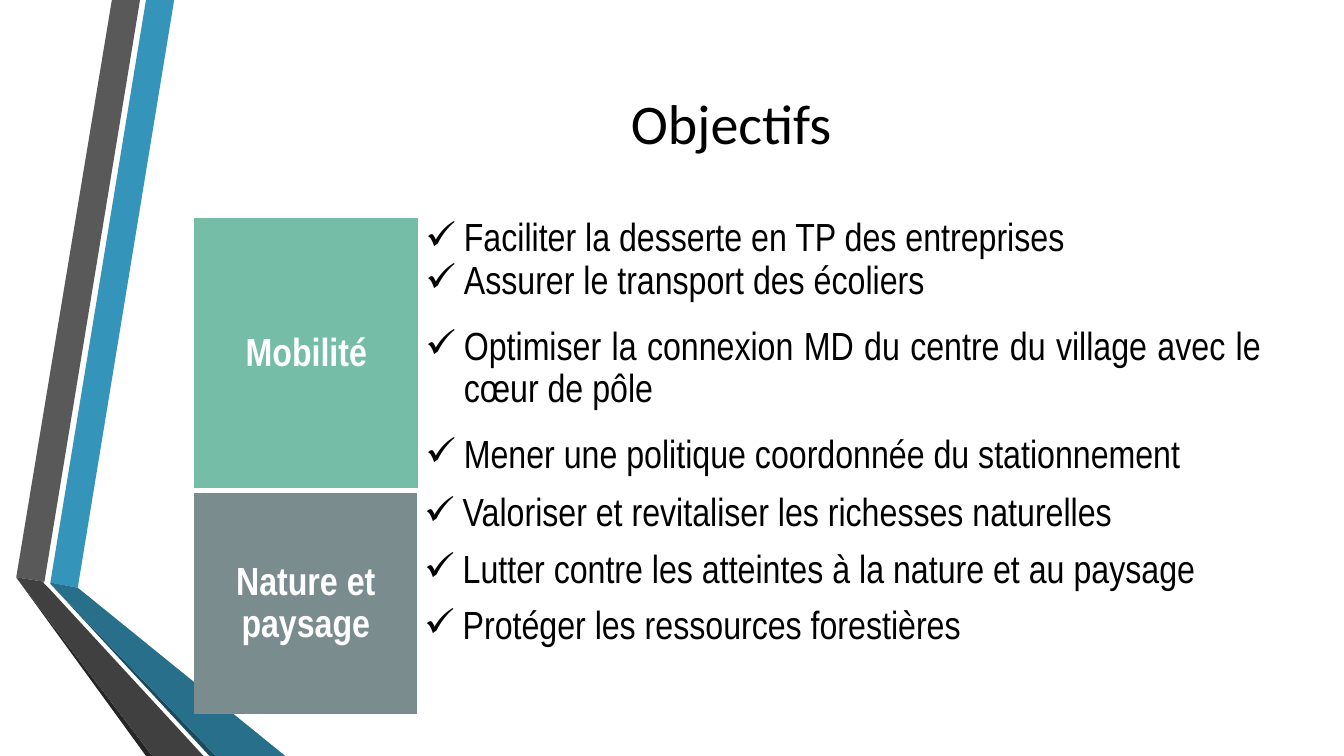
import pptx
import pptx.util
import pptx.dml.color
import pptx.enum.text
import pptx.oxml.ns
from lxml import etree

Cm = pptx.util.Cm
qn = pptx.oxml.ns.qn
ALIGN = pptx.enum.text.PP_ALIGN
ANCHOR = pptx.enum.text.MSO_ANCHOR

# Content: lengths in cm
TITLE = "Objectifs"
TITLE_BOX = (4.9, 0.64, 27.05, 4.88)

# Each theme row holds (height, objectives)
THEMES = [
    {
        "name": "Mobilité", "color": "75BDA7", "top": 5.49, "columns": (5.64, 21.41),
        "rows": [
            (2.13, ["Faciliter la desserte en TP des entreprises",
                    "Assurer le transport des écoliers"]),
            (2.13, ["Optimiser la connexion MD du centre du village avec le cœur de pôle"]),
            (1.07, ["Mener une politique coordonnée du stationnement"]),
        ],
    },
    {
        "name": "Nature et paysage", "color": "7A8C8E", "top": 12.42, "columns": (5.61, 21.44),
        "rows": [
            (1.42, ["Valoriser et revitaliser les richesses naturelles"]),
            (1.42, ["Lutter contre les atteintes à la nature et au paysage"]),
            (2.12, ["Protéger les ressources forestières"]),
        ],
    },
]

RIBBONS = [
    ("3494BA", [(1.27, 14.68), (1.96, 14.81), (4.39, 0), (3.68, 0)]),
    ("595959", [(3.53, 0), (2.82, 0), (0.41, 14.55), (1.12, 14.66)]),
    ("262626", [(0.41, 14.55), (3.68, 19.05), (3.84, 19.05)]),
    ("1A4A5D", [(1.27, 14.71), (5.28, 19.05), (5.44, 19.05)]),
    ("276F8B", [(1.27, 14.71), (5.44, 19.05), (7.19, 19.05), (1.96, 14.81), (1.27, 14.68)]),
    ("404040", [(5.13, 19.05), (1.22, 14.81), (1.09, 14.68), (1.12, 14.66),
                (0.41, 14.55), (3.84, 19.05)]),
]

TABLE_LEFT = 4.9
CELL_MARGIN = 0.18
BULLET_INDENT = 0.97
PLAIN_TABLE_STYLE = "{2D5ABB26-0587-4C30-8999-92F81FD0307C}"


def rgb(color):
    return pptx.dml.color.RGBColor.from_string(color)


def paint(part, color):
    part.fill.solid()
    part.fill.fore_color.rgb = rgb(color)


def write(frame, lines, *, size=28, font="Arial Narrow", color="000000", bold=False,
          align=ALIGN.JUSTIFY, spacing=1.15, bullet=None):
    frame.word_wrap = True
    for index, line in enumerate(lines):
        paragraph = frame.paragraphs[0] if index == 0 else frame.add_paragraph()
        paragraph.alignment = align
        paragraph.line_spacing = spacing
        run = paragraph.add_run()
        run.text = line
        run.font.size = pptx.util.Pt(size)
        run.font.name = font
        run.font.bold = bold
        run.font.color.rgb = rgb(color)
        if bullet:
            properties = paragraph._p.get_or_add_pPr()
            properties.set("marL", str(Cm(BULLET_INDENT)))
            properties.set("indent", str(-Cm(BULLET_INDENT)))
            etree.SubElement(properties, qn("a:buChar")).set("char", bullet)


def draw_ribbon(slide, color, points):
    corners = [(Cm(x), Cm(y)) for x, y in points]
    builder = slide.shapes.build_freeform(*corners[0])
    builder.add_line_segments(corners[1:], close=True)
    ribbon = builder.convert_to_shape()
    ribbon.shadow.inherit = False
    paint(ribbon, color)
    ribbon.line.fill.background()


def draw_theme(slide, theme):
    rows, columns = theme["rows"], theme["columns"]
    height = sum(row_height for row_height, _ in rows)
    frame = slide.shapes.add_table(len(rows), 2, Cm(TABLE_LEFT), Cm(theme["top"]),
                                   Cm(sum(columns)), Cm(height))
    table = frame.table
    table.first_row = table.horz_banding = False
    next(frame.element.iter(qn("a:tableStyleId"))).text = PLAIN_TABLE_STYLE
    for column, width in zip(table.columns, columns):
        column.width = Cm(width)

    # Objectives on the right
    for index, (row_height, objectives) in enumerate(rows):
        table.rows[index].height = Cm(row_height)
        heading, goals = table.cell(index, 0), table.cell(index, 1)
        for cell in (heading, goals):
            cell.margin_left = cell.margin_right = Cm(CELL_MARGIN)
            cell.margin_top = cell.margin_bottom = 0
        paint(heading, theme["color"])
        goals.fill.background()
        write(goals.text_frame, objectives, bullet="✓")

    # Theme name across all rows on the left
    heading = table.cell(0, 0)
    heading.merge(table.cell(len(rows) - 1, 0))
    heading.vertical_anchor = ANCHOR.MIDDLE
    write(heading.text_frame, [theme["name"]], color="FFFFFF", bold=True, align=ALIGN.CENTER)


def main():
    deck = pptx.Presentation()
    deck.slide_width, deck.slide_height = Cm(33.87), Cm(19.05)
    slide = deck.slides.add_slide(deck.slide_layouts[6])

    # Side ribbons
    for color, points in RIBBONS:
        draw_ribbon(slide, color, points)

    # Title
    title = slide.shapes.add_textbox(*map(Cm, TITLE_BOX)).text_frame
    title.vertical_anchor = ANCHOR.MIDDLE
    write(title, [TITLE], size=40, font="Calibri", align=ALIGN.CENTER, spacing=1.0)

    # Themes
    for theme in THEMES:
        draw_theme(slide, theme)

    deck.save("out.pptx")


if __name__ == "__main__":
    main()
